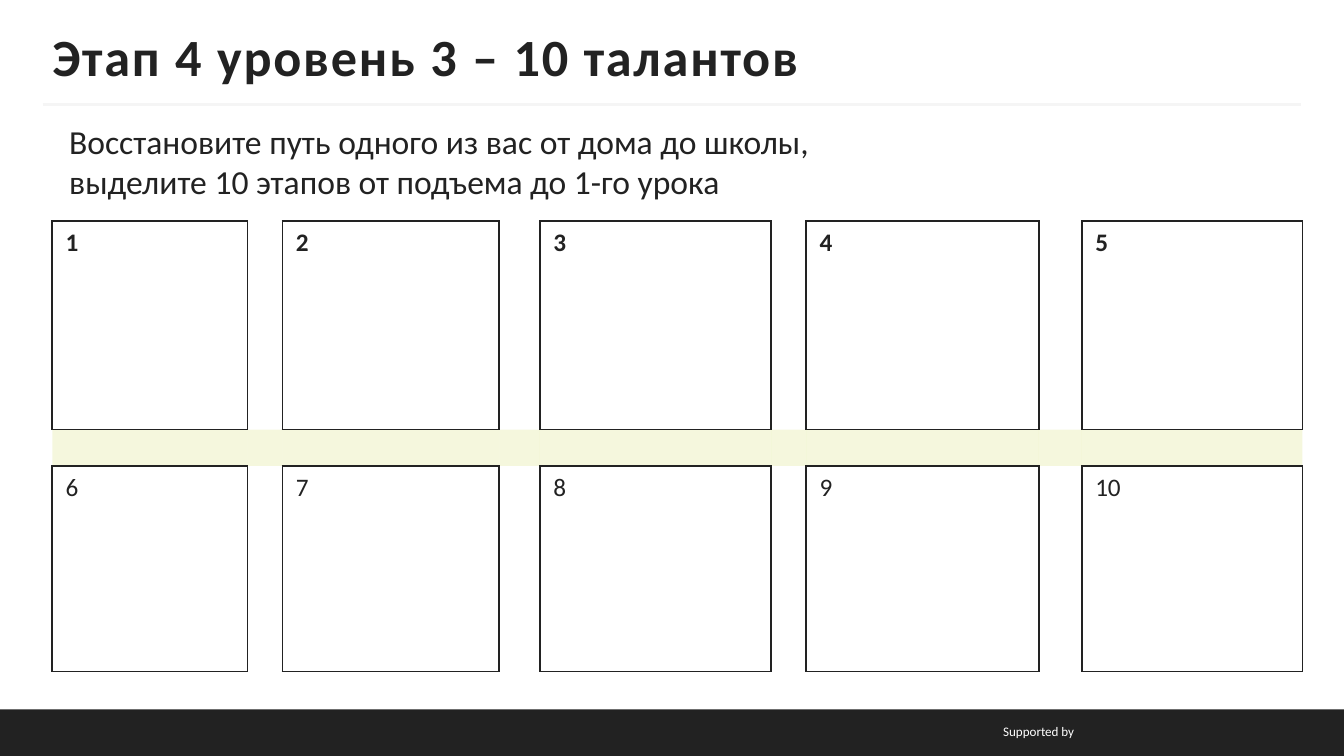
from lxml import etree
from pptx import Presentation
from pptx.dml.color import RGBColor
from pptx.enum.shapes import MSO_CONNECTOR, MSO_SHAPE
from pptx.enum.text import MSO_ANCHOR, PP_ALIGN
from pptx.oxml.ns import qn
from pptx.util import Pt

RECTANGLE = MSO_SHAPE.RECTANGLE
STRAIGHT = MSO_CONNECTOR.STRAIGHT
MIDDLE = MSO_ANCHOR.MIDDLE
LEFT, RIGHT = PP_ALIGN.LEFT, PP_ALIGN.RIGHT

# Content
TITLE = "Этап 4 уровень 3 – 10 талантов"
TASK = "Восстановите путь одного из вас от дома до школы,\vвыделите 10 этапов от подъема до 1-го урока"
FOOTER = "Supported by"
STAGE_ROWS = {0: ["1", "2", "3", "4", "5"], 2: ["6", "7", "8", "9", "10"]}

# Style and layout, in points
FONT = "Calibri"
COLORS = {"ink": "222222", "white": "FFFFFF", "rule": "F5F5F5", "band": "CEDB56"}
WIDTH, HEIGHT = 720, 405
FOOTER_TOP = 380
GRID_LEFT, GRID_TOP = 28, 118.5
COLUMNS = [104.5, 18.8, 116.2, 21.8, 123.8, 18.8, 124.7, 23, 118.2]
ROWS = [111.7, 19.5, 110.2]


def color(name):
    return RGBColor.from_string(COLORS[name])


def write(frame, text, size, ink="ink", bold=False, align=LEFT):
    paragraph = frame.paragraphs[0]
    paragraph.text = text
    paragraph.alignment = align
    for run in paragraph.runs:
        run.font.name, run.font.size, run.font.bold = FONT, Pt(size), bold
        run.font.color.rgb = color(ink)


def add_text(left, top, width, height, text, size, **style):
    frame = slide.shapes.add_textbox(Pt(left), Pt(top), Pt(width), Pt(height)).text_frame
    frame.word_wrap = True
    write(frame, text, size, **style)


def set_borders(cell, sides):
    properties = cell._tc.get_or_add_tcPr()
    for side in "LRTB":
        border = etree.SubElement(properties, qn(f"a:ln{side}"), w=str(Pt(1)))
        if side in sides:
            fill = etree.SubElement(border, qn("a:solidFill"))
            etree.SubElement(fill, qn("a:srgbClr"), val=COLORS["ink"])
        else:
            etree.SubElement(border, qn("a:noFill"))


def shrink_empty(cell):
    cell.margin_top = cell.margin_bottom = 0
    etree.SubElement(cell.text_frame.paragraphs[0]._p, qn("a:endParaRPr"), sz="800")


deck = Presentation()
deck.slide_width, deck.slide_height = Pt(WIDTH), Pt(HEIGHT)
slide = deck.slides.add_slide(deck.slide_layouts.get_by_name("Title Only"))

# Footer bar
bar = slide.shapes.add_shape(RECTANGLE, 0, Pt(FOOTER_TOP), Pt(WIDTH), Pt(HEIGHT - FOOTER_TOP))
bar.shadow.inherit = False
bar.fill.solid()
bar.fill.fore_color.rgb = color("ink")
bar.line.fill.background()
add_text(391.7, 383.8, 190.8, 15.8, FOOTER, 7, ink="white", align=RIGHT)

# Rule under the title
rule = slide.shapes.add_connector(STRAIGHT, Pt(23), Pt(56.2), Pt(697), Pt(56.2))
rule.line.color.rgb = color("rule")
rule.line.width = Pt(1.5)
etree.SubElement(rule._element.spPr, qn("a:effectLst"))

# Title
title = slide.shapes.title
title.left, title.top, title.width, title.height = Pt(28), Pt(18), Pt(664), Pt(24)
heading = title.text_frame
heading.margin_left = heading.margin_right = 0
heading.margin_top = heading.margin_bottom = Pt(3.6)
heading.vertical_anchor = MIDDLE
heading.word_wrap = False
write(heading, TITLE, 28, bold=True)
heading.paragraphs[0].runs[0].font._element.set("spc", "100")

# Stage grid: boxes in even columns, a tinted band between the two rows
grid = slide.shapes.add_table(len(ROWS), len(COLUMNS), Pt(GRID_LEFT), Pt(GRID_TOP),
                              Pt(sum(COLUMNS)), Pt(sum(ROWS))).table
grid.first_row = grid.horz_banding = False
for column, width in zip(grid.columns, COLUMNS):
    column.width = Pt(width)
for r, height in enumerate(ROWS):
    grid.rows[r].height = Pt(height)
    for c in range(len(COLUMNS)):
        cell = grid.cell(r, c)
        is_box_column = c % 2 == 0
        if r in STAGE_ROWS:
            set_borders(cell, "LRTB" if is_box_column else "LR")
            cell.fill.background()
        else:
            set_borders(cell, "TB" if is_box_column else "")
            cell.fill.solid()
            cell.fill.fore_color.rgb = color("band")
            tint = cell._tc.tcPr.find(qn("a:solidFill"))[0]
            etree.SubElement(tint, qn("a:alpha"), val="20000")
        if r in STAGE_ROWS and is_box_column:
            write(cell.text_frame, STAGE_ROWS[r][c // 2], 13.5, bold=r == 0)
        else:
            shrink_empty(cell)

# Task
add_text(30, 61.2, 667.5, 51, TASK, 18)

deck.save("out.pptx")
